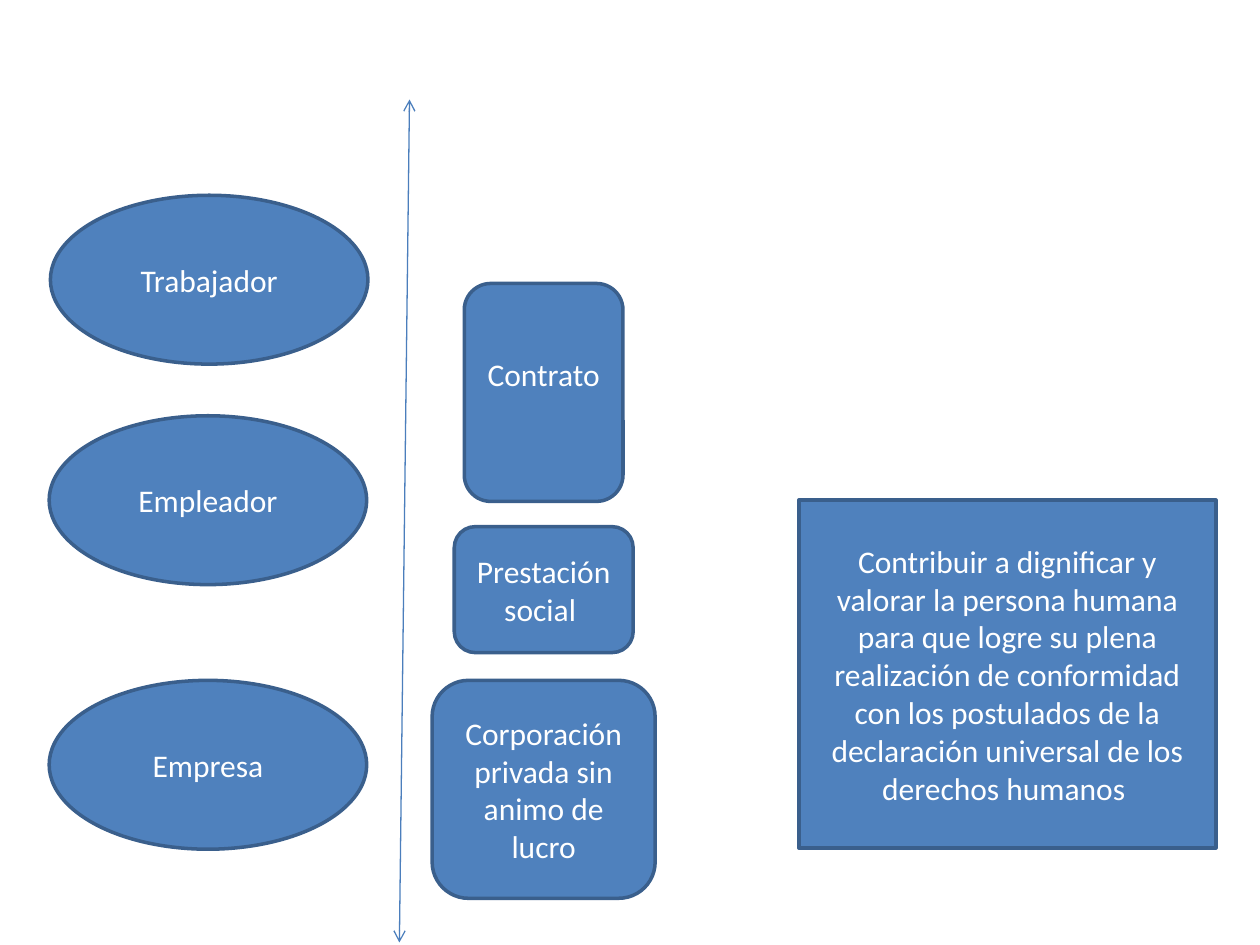
from lxml import etree
from pptx import Presentation
from pptx.dml.color import RGBColor
from pptx.enum.shapes import MSO_CONNECTOR, MSO_SHAPE
from pptx.enum.text import MSO_ANCHOR, PP_ALIGN
from pptx.oxml.ns import qn
from pptx.util import Inches, Pt

BLUE = RGBColor(0x4F, 0x81, 0xBD)
OUTLINE = RGBColor(0x3A, 0x5F, 0x8C)
ARROW_BLUE = RGBColor(0x4B, 0x7E, 0xBC)
WHITE = RGBColor(0xFF, 0xFF, 0xFF)
FONT_FORMAT = {"name": "Calibri", "size": Pt(18)}
FRAME_FORMAT = {"word_wrap": True, "vertical_anchor": MSO_ANCHOR.MIDDLE}


def apply_format(target, values):
    """Set each named attribute of the target."""
    for name, value in values.items():
        setattr(target, name, value)


def add_label(page, kind, box, text, bottom=0.05):
    """Draw a filled shape with centred text in the given box."""
    shape = page.shapes.add_shape(kind, *map(Inches, box))
    shape.shadow.inherit = False
    shape.fill.solid()
    shape.fill.fore_color.rgb = BLUE
    shape.line.color.rgb = OUTLINE
    shape.line.width = Pt(2)
    frame = shape.text_frame
    apply_format(frame, FRAME_FORMAT | {"margin_bottom": Inches(bottom)})
    para = frame.paragraphs[0]
    para.alignment = PP_ALIGN.CENTER
    span = para.add_run()
    span.text = text
    apply_format(span.font, FONT_FORMAT)
    span.font.color.rgb = WHITE


def add_parties(page, box):
    """Place the ellipses of the parties down the left column."""
    left, top, width, height = box
    parties = (("Trabajador", 0.01, 0), ("Empleador", 0, 1.75), ("Empresa", 0, 3.85))
    for text, shift, drop in parties:
        add_label(page, MSO_SHAPE.OVAL, (left + shift, top + drop, width, height), text)


def add_relations(page, box):
    """Place the rounded boxes about the middle of the given column."""
    left, top, column_width = box
    relations = (
        ("Contrato ", 0, 1.26, 1.73, 0.35),
        ("Prestación social ", 1.93, 1.42, 1, 0.05),
        ("Corporación privada sin animo de lucro", 3.15, 1.77, 1.73, 0.05),
    )
    for text, drop, width, height, bottom in relations:
        place = (left + (column_width - width) / 2, top + drop, width, height)
        add_label(page, MSO_SHAPE.ROUNDED_RECTANGLE, place, text, bottom)


def add_divider(page, start, end):
    """Draw the double-headed arrow between the columns."""
    arrow = page.shapes.add_connector(
        MSO_CONNECTOR.STRAIGHT, *map(Inches, start + end)
    )
    arrow.line.color.rgb = ARROW_BLUE
    arrow.line.width = Pt(0.75)
    outline = arrow.line._get_or_add_ln()
    for tag in ("a:headEnd", "a:tailEnd"):
        etree.SubElement(outline, qn(tag), type="arrow")
    etree.SubElement(arrow._element.spPr, qn("a:effectLst"))


def add_purpose(page, box):
    """Place the statement of purpose."""
    text = (
        "Contribuir a dignificar y valorar la persona humana para que logre "
        "su plena realización de conformidad con los postulados de la "
        "declaración universal de los derechos humanos "
    )
    add_label(page, MSO_SHAPE.RECTANGLE, box, text)


def main():
    """Build and save the deck."""
    deck = Presentation()
    apply_format(deck, {"slide_width": Inches(10), "slide_height": Inches(7.5)})
    page = deck.slides.add_slide(deck.slide_layouts[6])
    add_purpose(page, (6.34, 3.97, 3.31, 2.76))
    add_parties(page, (0.39, 1.55, 2.52, 1.34))
    add_divider(page, (3.25, 0.79), (3.17, 7.48))
    add_relations(page, (3.44, 2.25, 1.75))
    deck.save("out.pptx")


if __name__ == "__main__":
    main()
